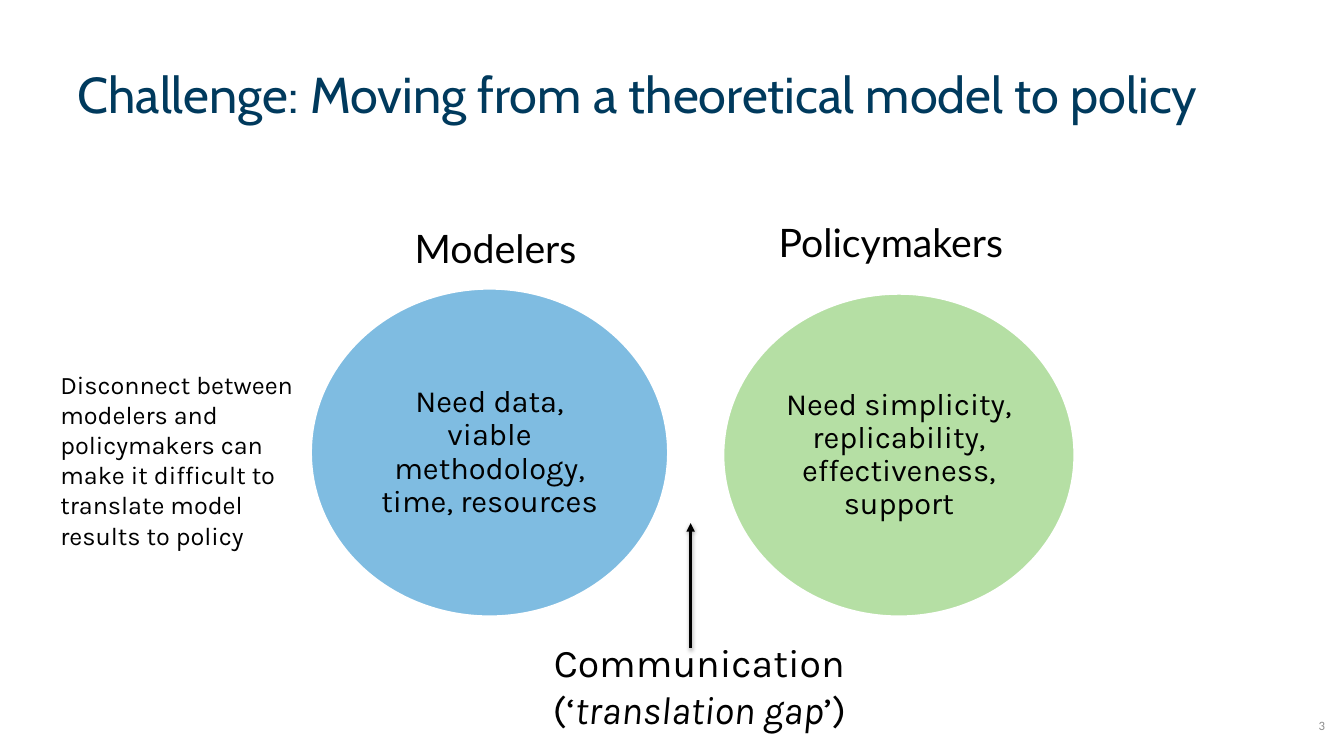
"""Build a slide on the gap between modelers and policymakers."""
from dataclasses import dataclass

import lxml.etree
import pptx
import pptx.dml.color
import pptx.enum.shapes
import pptx.enum.text
import pptx.oxml
import pptx.oxml.ns
import pptx.presentation
import pptx.shapes.autoshape
import pptx.slide
import pptx.text.text
import pptx.util

Inches = pptx.util.Inches
Align = pptx.enum.text.PP_ALIGN
Anchor = pptx.enum.text.MSO_ANCHOR


@dataclass(frozen=True)
class Theme:
    """Colours, fonts and type sizes of the slide."""
    navy: str = "003A5D"
    blue: str = "007BC5"
    green: str = "6CC04A"
    black: str = "000000"
    white: str = "FFFFFF"
    gray: str = "8C8C8C"
    title_font: str = "Cabin"
    heading_font: str = "Lato"
    body_font: str = "Karla"
    number_font: str = "Calibri"
    title_size: float = 36
    heading_size: float = 28
    need_size: float = 22
    note_size: float = 18
    number_size: float = 9.1
    circle_opacity: int = 50
    line_width: float = 2


@dataclass(frozen=True)
class Box:
    """Position and size in inches."""
    left: float
    top: float
    width: float
    height: float

    def lengths(self) -> tuple[int, int, int, int]:
        """Return the four values as slide lengths."""
        return (Inches(self.left), Inches(self.top),
                Inches(self.width), Inches(self.height))


@dataclass(frozen=True)
class Label:
    """A free-standing text; runs after the first alternate in italics."""
    box: Box
    runs: tuple[str, ...]
    font: str
    size: float
    color: str = "000000"
    align: Align = Align.CENTER
    anchor: Anchor = Anchor.TOP
    indent: float = 0
    inset: float = 0.05


@dataclass(frozen=True)
class Group:
    """One side of the gap, with its needs inside a circle."""
    circle: Box
    color: str
    needs: str


THEME = Theme()

LABELS = (
    Label(Box(0.67, 0.3, 12, 1.25),
          ("Challenge: Moving from a theoretical model to policy",),
          THEME.title_font, THEME.title_size, THEME.navy, Align.LEFT, Anchor.MIDDLE, inset=0),
    Label(Box(10.13, 7, 3.11, 0.4), ("3",),
          THEME.number_font, THEME.number_size, THEME.gray, Align.RIGHT, Anchor.MIDDLE),
    Label(Box(4, 2.18, 1.83, 0.57), ("Modelers",),
          THEME.heading_font, THEME.heading_size),
    Label(Box(7.62, 2.12, 2.43, 0.57), ("Policymakers",),
          THEME.heading_font, THEME.heading_size),
    Label(Box(5.04, 6.28, 3.79, 1.04), ("Communication (‘", "translation gap", "’)"),
          THEME.body_font, THEME.heading_size),
    Label(Box(0, 3.61, 3.12, 1.92),
          ("Disconnect between modelers and policymakers can make it difficult "
           "to translate model results to policy",),
          THEME.body_font, THEME.note_size, align=Align.LEFT, indent=0.5),
)

GROUPS = (
    Group(Box(3.08, 2.86, 3.55, 3.26), THEME.blue,
          "Need data, viable methodology, time, resources"),
    Group(Box(7.17, 2.91, 3.49, 3.21), THEME.green,
          "Need simplicity, replicability, effectiveness, support"),
)


def rgb(color: str) -> pptx.dml.color.RGBColor:
    """Turn a hex string into a colour."""
    return pptx.dml.color.RGBColor.from_string(color)


def style_run(run: pptx.text.text._Run, font: str, size: float, color: str) -> None:
    """Set the font, size and colour of a run."""
    run.font.name = font
    run.font.size = pptx.util.Pt(size)
    run.font.color.rgb = rgb(color)


def set_insets(frame: pptx.text.text.TextFrame, side: float, vertical: float) -> None:
    """Set the inner margins of a text frame."""
    frame.margin_left = frame.margin_right = Inches(side)
    frame.margin_top = frame.margin_bottom = Inches(vertical)


def draw_label(slide: pptx.slide.Slide, label: Label) -> None:
    """Draw a free-standing text."""
    frame = slide.shapes.add_textbox(*label.box.lengths()).text_frame
    frame.word_wrap = True
    frame.vertical_anchor = label.anchor
    set_insets(frame, 0.1, label.inset)
    paragraph = frame.paragraphs[0]
    paragraph.alignment = label.align
    if label.indent:
        properties = paragraph._p.get_or_add_pPr()
        properties.set("marL", str(Inches(label.indent)))
        properties.set("indent", "0")
    for position, text in enumerate(label.runs):
        run = paragraph.add_run()
        run.text = text
        style_run(run, label.font, label.size, label.color)
        if position % 2:
            run.font.italic = True


def draw_group(slide: pptx.slide.Slide, group: Group) -> None:
    """Draw a translucent circle holding the needs of one group."""
    circle = slide.shapes.add_shape(
        pptx.enum.shapes.MSO_SHAPE.OVAL, *group.circle.lengths())
    circle.shadow.inherit = False
    circle.fill.solid()
    circle.fill.fore_color.rgb = rgb(group.color)
    fill_color = circle._element.spPr.find(
        f"{pptx.oxml.ns.qn('a:solidFill')}/{pptx.oxml.ns.qn('a:srgbClr')}")
    lxml.etree.SubElement(fill_color, pptx.oxml.ns.qn("a:alpha"),
                          val=str(THEME.circle_opacity * 1000))
    circle.line.color.rgb = rgb(THEME.white)
    circle.line.width = pptx.util.Pt(THEME.line_width)
    frame = circle.text_frame
    frame.text = group.needs
    frame.word_wrap = True
    frame.vertical_anchor = Anchor.MIDDLE
    set_insets(frame, 0.09, 0.09)
    paragraph = frame.paragraphs[0]
    paragraph.alignment = Align.CENTER
    paragraph.line_spacing = 0.9
    style_run(paragraph.runs[0], THEME.body_font, THEME.need_size, THEME.black)


def draw_gap_arrow(slide: pptx.slide.Slide) -> None:
    """Draw the shadowed arrow pointing up into the gap."""
    arrow = slide.shapes.add_connector(
        pptx.enum.shapes.MSO_CONNECTOR.STRAIGHT,
        Inches(6.85), Inches(6.43), Inches(6.85), Inches(5.19))
    arrow.line.color.rgb = rgb(THEME.black)
    arrow.line.width = pptx.util.Pt(THEME.line_width)
    lxml.etree.SubElement(arrow.line._get_or_add_ln(),
                          pptx.oxml.ns.qn("a:tailEnd"), type="triangle")
    arrow._element.spPr.append(pptx.oxml.parse_xml(
        f"<a:effectLst {pptx.oxml.ns.nsdecls('a')}>"
        f'<a:outerShdw blurRad="{pptx.util.Pt(3.1)}" dist="{pptx.util.Pt(1.6)}" '
        f'dir="5400000" rotWithShape="0"><a:srgbClr val="{THEME.black}">'
        '<a:alpha val="38000"/></a:srgbClr></a:outerShdw></a:effectLst>'))


def main() -> None:
    """Assemble and save the slide."""
    presentation = pptx.Presentation()
    presentation.slide_width = Inches(13.33)
    presentation.slide_height = Inches(7.5)
    slide = presentation.slides.add_slide(presentation.slide_layouts[6])
    for group in GROUPS:
        draw_group(slide, group)
    for label in LABELS:
        draw_label(slide, label)
    draw_gap_arrow(slide)
    presentation.save("out.pptx")


if __name__ == "__main__":
    main()
